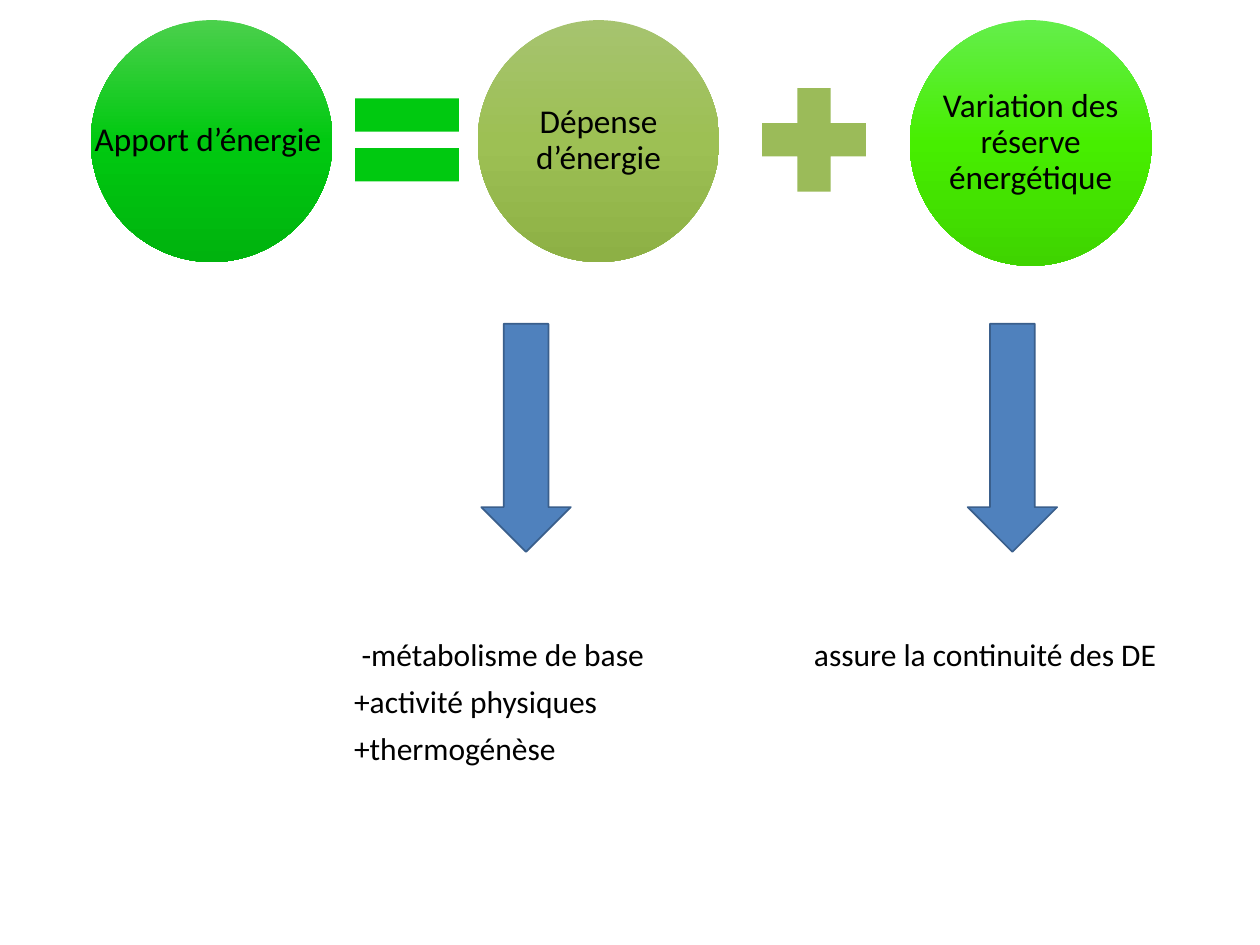
from pptx import Presentation, dml, oxml, util as u
from pptx.dml.color import RGBColor
from pptx.enum import shapes, text
from pptx.oxml import ns

FONT, BLACK = "Calibri", "000000"
CIRCLE_WIDTH, CIRCLE_TOP = 1.92, 0.16
CIRCLES = [
    ("Apport d’énergie ", 0.72, 1.92, ("4BD04C", "00C910", "00B30E")),
    ("Dépense d’énergie", 3.79, 1.92, ("A6C36F", "9DC054", "8DB045")),
    ("Variation des réserve énergétique", 7.22, 1.95, ("64EE4B", "47EE00", "3FD400")),
]
OPERATORS = [("MATH_EQUAL", 2.67, "00C910"), ("MATH_PLUS", 5.9, "9BBB59")]
ARROW_LEFTS = [3.82, 7.68]
EXPLANATIONS = [
    (2.71, 3.5, ["-métabolisme de base", "+activité physiques", "+thermogénèse"], 0.06),
    (6.36, 3.28, ["assure la continuité des DE"], 0),
]


def colour(value):
    return RGBColor.from_string(value)


def box(left, top, width, height):
    return [u.Inches(length) for length in (left, top, width, height)]


def add_preset(slide, preset, place, fill):
    shape = slide.shapes.add_shape(getattr(shapes.MSO_SHAPE, preset), *place)
    shape.shadow.inherit = False
    shape.fill.solid()
    shape.fill.fore_color.rgb = colour(fill)
    shape.line.fill.background()
    return shape


def shade(shape, tones):
    shape.fill.gradient()
    shape.fill.gradient_angle = 270
    stops = shape._element.spPr.find(ns.qn("a:gradFill")).find(ns.qn("a:gsLst"))
    for stop in list(stops):
        stops.remove(stop)
    for position, tone in zip((0, 50000, 100000), tones):
        stops.append(oxml.parse_xml(
            f'<a:gs {ns.nsdecls("a")} pos="{position}"><a:srgbClr val="{tone}"/></a:gs>'))


def write(paragraph, words, size):
    paragraph.line_spacing = 0.9
    run = paragraph.add_run()
    run.text = words
    run.font.name, run.font.size = FONT, u.Pt(size)
    run.font.color.rgb = colour(BLACK)


def add_circle(slide, label, left, height, tones):
    place = box(left, CIRCLE_TOP, CIRCLE_WIDTH, height)
    shade(add_preset(slide, "OVAL", place, tones[1]), tones)
    frame = slide.shapes.add_textbox(*place).text_frame
    frame.word_wrap = True
    frame.vertical_anchor = text.MSO_ANCHOR.MIDDLE
    frame.margin_left = frame.margin_right = u.Inches(0.03)
    frame.margin_top = frame.margin_bottom = u.Inches(0.03)
    frame.paragraphs[0].alignment = text.PP_ALIGN.CENTER
    write(frame.paragraphs[0], label, 19)


def fill_explanation(body, left, width, lines, first_indent):
    body.left, body.top, body.width, body.height = box(left, 5.02, width, 1.64)
    frame = body.text_frame
    frame.auto_size = text.MSO_AUTO_SIZE.NONE
    for index, line in enumerate(lines):
        paragraph = frame.add_paragraph() if index else frame.paragraphs[0]
        write(paragraph, line, 18)
        paragraph.space_before = u.Pt(7.5)
        properties = paragraph._p.get_or_add_pPr()
        properties.set("marL", "0")
        properties.set("indent", str(0 if index else u.Inches(first_indent)))
        properties.append(oxml.parse_xml(f'<a:buNone {ns.nsdecls("a")}/>'))


def main():
    """Build the energy balance slide."""
    deck = Presentation()
    deck.slide_width, deck.slide_height = u.Inches(10), u.Inches(7.5)
    slide = deck.slides.add_slide(deck.slide_layouts[3])
    title, *bodies = slide.placeholders
    title._element.getparent().remove(title._element)
    for body, explanation in zip(bodies, EXPLANATIONS):
        fill_explanation(body, *explanation)
    for circle in CIRCLES:
        add_circle(slide, *circle)
    for preset, left, fill in OPERATORS:
        add_preset(slide, preset, box(left, 0.55, 1.12, 1.12), fill)
    for left in ARROW_LEFTS:
        arrow = add_preset(slide, "DOWN_ARROW", box(left, 2.57, 0.71, 1.81), "4F81BD")
        arrow.line.color.rgb = colour("3A5F8C")
        arrow.line.width = u.Pt(1)
    deck.save("out.pptx")


if __name__ == "__main__":
    main()
